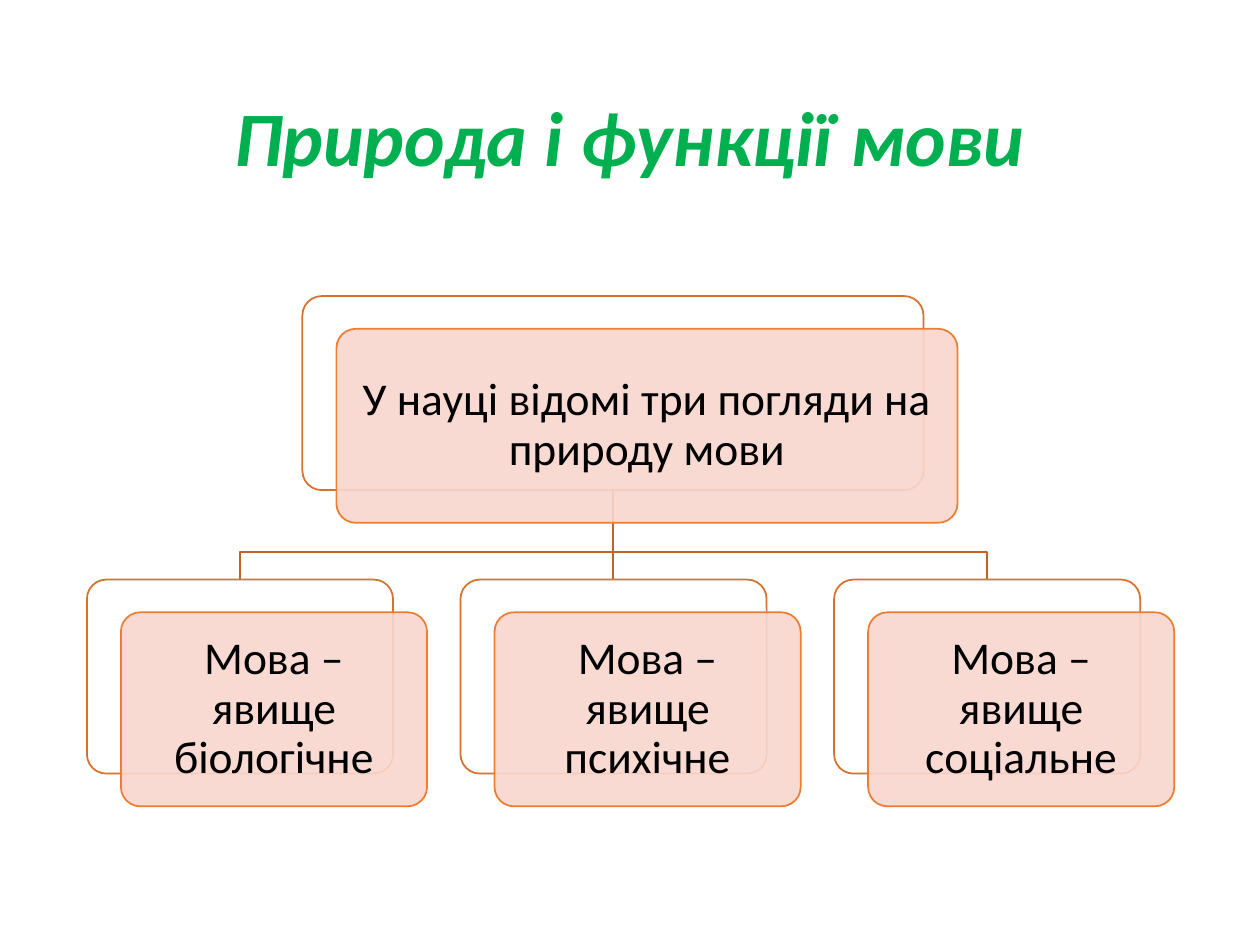
from lxml.etree import SubElement
from pptx import Presentation
from pptx.dml.color import RGBColor
from pptx.enum.shapes import MSO_CONNECTOR as Connector, MSO_SHAPE as Shape
from pptx.enum.text import MSO_ANCHOR as Anchor, MSO_AUTO_SIZE as AutoSize, PP_ALIGN as Align
from pptx.oxml.ns import qn
from pptx.util import Inches, Pt

TITLE_FONT = {"name": "Calibri", "size": Pt(44), "bold": True, "italic": True}
CARD_FONT = {"name": "Calibri", "size": Pt(26), "bold": False}
CARD_OFFSET = (0.27, 0.26)
CARD_HEIGHT = 1.54
ROOT_BOX = (2.4, 2.35, 4.93, CARD_HEIGHT)
LEAF_LEFT, LEAF_TOP, LEAF_WIDTH, LEAF_STEP = 0.69, 4.6, 2.43, 2.965
BRANCH_Y = 4.38
ROOT_TEXT = "У науці відомі три погляди на природу мови"
LEAF_TEXTS = [f"Мова – явище {kind}" for kind in ("біологічне", "психічне", "соціальне")]


def color(hex_code):
    """Return the colour for a hex string."""
    return RGBColor.from_string(hex_code)


def set_text(frame, text, font_values, hex_code, margin):
    """Write centred text with one format into a text frame."""
    frame_values = {"word_wrap": True, "auto_size": AutoSize.NONE, "vertical_anchor": Anchor.MIDDLE}
    for side in ("left", "top", "right", "bottom"):
        frame_values[f"margin_{side}"] = Inches(margin)
    for name, value in frame_values.items():
        setattr(frame, name, value)
    para = frame.paragraphs[0]
    para.alignment, para.line_spacing = Align.CENTER, 0.9
    span = para.add_run()
    span.text = text
    for name, value in font_values.items():
        setattr(span.font, name, value)
    span.font.color.rgb = color(hex_code)


def set_line(item, hex_code):
    """Give an item a one-point line."""
    item.line.color.rgb = color(hex_code)
    item.line.width = Pt(1)


def add_title(page, text, box):
    """Place the title placeholder in the box."""
    title = page.shapes.title
    title.left, title.top, title.width, title.height = map(Inches, box)
    set_text(title.text_frame, text, TITLE_FONT, "00B050", 0.05)


def add_panel(page, box, fill, line):
    """Draw one rounded rectangle in the box."""
    panel = page.shapes.add_shape(Shape.ROUNDED_RECTANGLE, *map(Inches, box))
    panel.adjustments[0] = 0.1
    panel.shadow.inherit = False
    panel.fill.solid()
    panel.fill.fore_color.rgb = color(fill)
    set_line(panel, line)
    return panel


def add_card(page, text, box):
    """Draw a white panel and an offset translucent panel with text."""
    left, top, width, height = box
    add_panel(page, box, "FFFFFF", "D7712C")
    front_box = (left + CARD_OFFSET[0], top + CARD_OFFSET[1], width, height)
    front = add_panel(page, front_box, "F8D7CE", "ED7D31")
    fill_color = front.fill._xPr.find(qn("a:solidFill"))[0]
    SubElement(fill_color, qn("a:alpha"), val="90000")
    set_text(front.text_frame, text, CARD_FONT, "000000", 0.15)


def add_elbow(page, points):
    """Draw an open bent line through the points."""
    start, *rest = [tuple(map(Inches, point)) for point in points]
    builder = page.shapes.build_freeform(*start)
    builder.add_line_segments(rest, close=False)
    elbow = builder.convert_to_shape()
    elbow.shadow.inherit = False
    elbow.fill.background()
    set_line(elbow, "BE6427")


def add_stem(page, start, end):
    """Draw a straight line between two points."""
    stem = page.shapes.add_connector(Connector.STRAIGHT, *map(Inches, start + end))
    SubElement(stem._element.spPr, qn("a:effectLst"))
    set_line(stem, "BE6427")


def add_hierarchy(page, root_box):
    """Draw the root card, its branches and the row of leaf cards."""
    left, top, width, height = root_box
    root_x, root_bottom = left + width / 2, top + height
    leaf_boxes = [(LEAF_LEFT + index * LEAF_STEP, LEAF_TOP, LEAF_WIDTH, CARD_HEIGHT)
                  for index in range(len(LEAF_TEXTS))]
    for leaf_left, leaf_top, leaf_width, _ in (leaf_boxes[0], leaf_boxes[-1]):
        leaf_x = leaf_left + leaf_width / 2
        add_elbow(page, [(root_x, root_bottom), (root_x, BRANCH_Y),
                         (leaf_x, BRANCH_Y), (leaf_x, leaf_top)])
    add_stem(page, (root_x, root_bottom), (root_x, LEAF_TOP))
    add_card(page, ROOT_TEXT, root_box)
    for text, box in zip(LEAF_TEXTS, leaf_boxes):
        add_card(page, text, box)


def main():
    """Build and save the deck."""
    deck = Presentation()
    deck.slide_width, deck.slide_height = Inches(10), Inches(7.5)
    page = deck.slides.add_slide(deck.slide_layouts[5])
    add_title(page, "Природа і функції мови", (0.69, 0.4, 8.62, 1.45))
    add_hierarchy(page, ROOT_BOX)
    deck.save("out.pptx")


if __name__ == "__main__":
    main()
